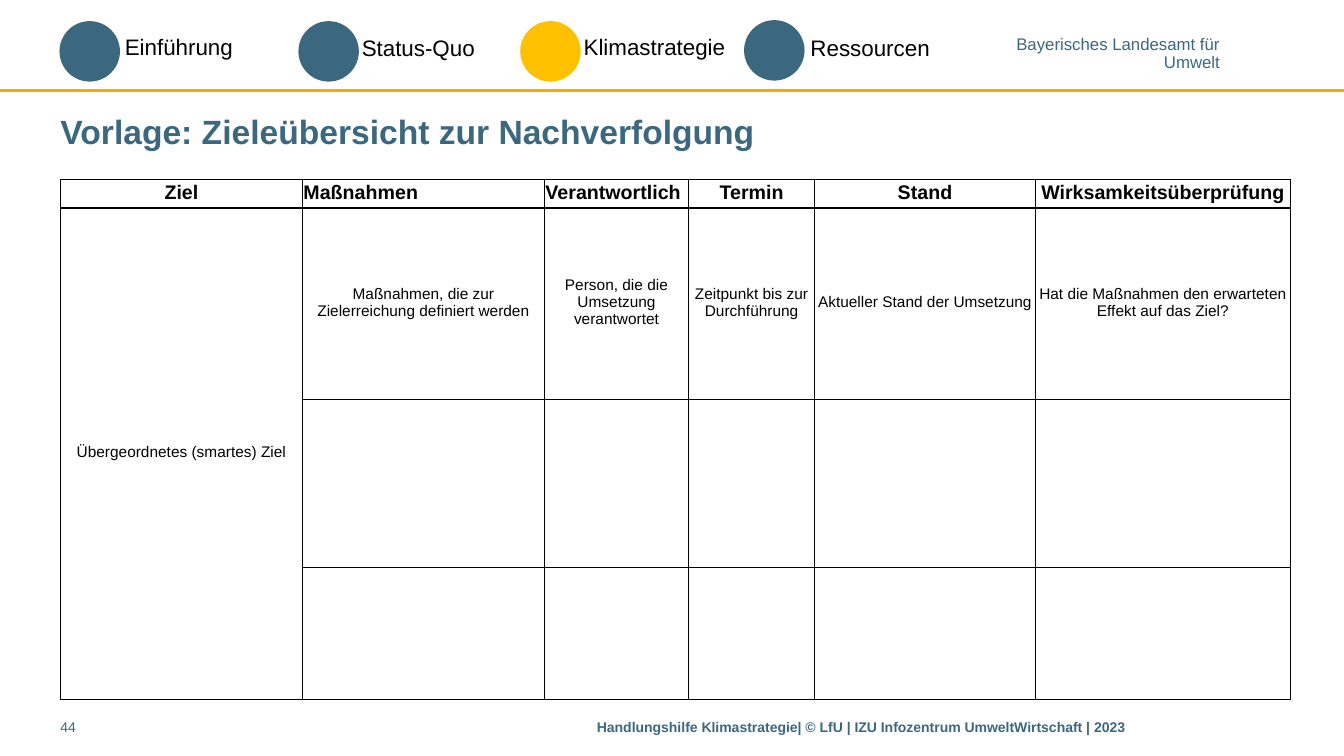
from lxml.etree import SubElement
from pptx import Presentation
from pptx.dml.color import RGBColor
from pptx.enum.shapes import MSO_CONNECTOR, MSO_SHAPE
from pptx.enum.text import MSO_ANCHOR, PP_ALIGN
from pptx.oxml.ns import qn
from pptx.util import Inches, Pt

COLORS = {"blue": "3B687F", "yellow": "FFC000", "rule": "F9AA00", "black": "000000"}
FONT = "Arial"
LEFT, CENTER, RIGHT = PP_ALIGN.LEFT, PP_ALIGN.CENTER, PP_ALIGN.RIGHT

CHAPTERS = [
    ("Einführung", "blue", (0.59, 0.21), (1.14, 0.28), 1.36),
    ("Status-Quo", "blue", (2.96, 0.21), (3.49, 0.29), 1.36),
    ("Klimastrategie", "yellow", (5.16, 0.21), (5.69, 0.28), 2.95),
    ("Ressourcen", "blue", (7.38, 0.2), (7.94, 0.29), 2.95),
]
AGENCY = ["Bayerisches Landesamt für", "Umwelt"]
TITLE = "Vorlage: Zieleübersicht zur Nachverfolgung"
FOOTER = "Handlungshilfe Klimastrategie| © LfU | IZU Infozentrum UmweltWirtschaft | 2023"
PAGE_NUMBER = "44"

COLUMNS = [
    ("Ziel", CENTER, 2.4, "Übergeordnetes (smartes) Ziel"),
    ("Maßnahmen", LEFT, 2.4, "Maßnahmen, die zur Zielerreichung definiert werden"),
    ("Verantwortlich", LEFT, 1.43, "Person, die die Umsetzung verantwortet"),
    ("Termin", CENTER, 1.25, "Zeitpunkt bis zur Durchführung"),
    ("Stand", CENTER, 2.19, "Aktueller Stand der Umsetzung"),
    ("Wirksamkeitsüberprüfung", CENTER, 2.53, "Hat die Maßnahmen den erwarteten Effekt auf das Ziel?"),
]
ROW_HEIGHTS = [0.26, 1.9, 1.67, 1.31]


def write(frame, lines, size=10, color="blue", bold=False, align=LEFT, spacing=None):
    for index, line in enumerate(lines):
        para = frame.paragraphs[0] if index == 0 else frame.add_paragraph()
        para.alignment = align
        if spacing:
            para.line_spacing = spacing
        span = para.add_run()
        span.text = line
        span.font.name = FONT
        span.font.size = Pt(size)
        span.font.bold = bold
        span.font.color.rgb = RGBColor.from_string(COLORS[color])


def add_label(page, lines, place, inset=(0, 0.05), wrap=True, anchor=MSO_ANCHOR.TOP, **style):
    box = page.shapes.add_textbox(*map(Inches, place))
    frame = box.text_frame
    frame.word_wrap = wrap
    frame.vertical_anchor = anchor
    frame.margin_left = frame.margin_right = Inches(inset[0])
    frame.margin_top = frame.margin_bottom = Inches(inset[1])
    write(frame, lines, **style)


def add_rule(page):
    rule = page.shapes.add_connector(
        MSO_CONNECTOR.STRAIGHT, 0, Inches(0.9), Inches(13.33), Inches(0.9))
    rule.line.color.rgb = RGBColor.from_string(COLORS["rule"])
    rule.line.width = Pt(2)
    SubElement(rule._element.spPr, qn("a:effectLst"))


def add_chapter(page, name, color, dot_place, label_place, label_width):
    dot = page.shapes.add_shape(
        MSO_SHAPE.OVAL, *map(Inches, dot_place), Inches(0.6), Inches(0.6))
    dot.shadow.inherit = False
    dot.fill.solid()
    dot.fill.fore_color.rgb = RGBColor.from_string(COLORS[color])
    dot.line.fill.background()
    add_label(page, [name], (*label_place, label_width, 0.37), inset=(0.1, 0.05),
              size=16, color="black")


def format_cell(cell):
    cell.vertical_anchor = MSO_ANCHOR.MIDDLE
    cell.margin_left = cell.margin_right = cell.margin_top = Inches(0.01)
    cell.margin_bottom = Inches(0.04)
    properties = cell._tc.get_or_add_tcPr()
    for side in ("lnL", "lnR", "lnT", "lnB"):
        border = SubElement(properties, qn(f"a:{side}"), w=str(Pt(1)))
        fill = SubElement(border, qn("a:solidFill"))
        SubElement(fill, qn("a:srgbClr"), val=COLORS["black"])
    cell.fill.background()


def add_goal_table(page):
    table = page.shapes.add_table(
        len(ROW_HEIGHTS), len(COLUMNS), Inches(0.6), Inches(1.78),
        Inches(sum(column[2] for column in COLUMNS)), Inches(sum(ROW_HEIGHTS))).table
    table.first_row = table.horz_banding = False
    for row, height in zip(table.rows, ROW_HEIGHTS):
        row.height = Inches(height)
    for cell in table.iter_cells():
        format_cell(cell)
    for index, (heading, align, width, hint) in enumerate(COLUMNS):
        table.columns[index].width = Inches(width)
        write(table.cell(0, index).text_frame, [heading], size=14, color="black",
              bold=True, align=align)
        write(table.cell(1, index).text_frame, [hint], size=11, color="black", align=CENTER)
    table.cell(1, 0).merge(table.cell(len(ROW_HEIGHTS) - 1, 0))


def main():
    deck = Presentation()
    deck.slide_width, deck.slide_height = Inches(13.33), Inches(7.5)
    page = deck.slides.add_slide(deck.slide_layouts[6])
    add_rule(page)
    add_label(page, AGENCY, (10.07, 0.37, 2.03, 0.34), inset=(0, 0), wrap=False,
              size=12, align=RIGHT, spacing=0.85)
    for chapter in CHAPTERS:
        add_chapter(page, *chapter)
    add_label(page, [TITLE], (0.6, 1.02, 12.31, 0.55), anchor=MSO_ANCHOR.MIDDLE,
              size=24, bold=True)
    add_goal_table(page)
    add_label(page, [FOOTER], (5.92, 7.08, 6.99, 0.31), bold=True)
    add_label(page, [PAGE_NUMBER], (0.6, 7.08, 0.7, 0.31))
    deck.save("out.pptx")


if __name__ == "__main__":
    main()
